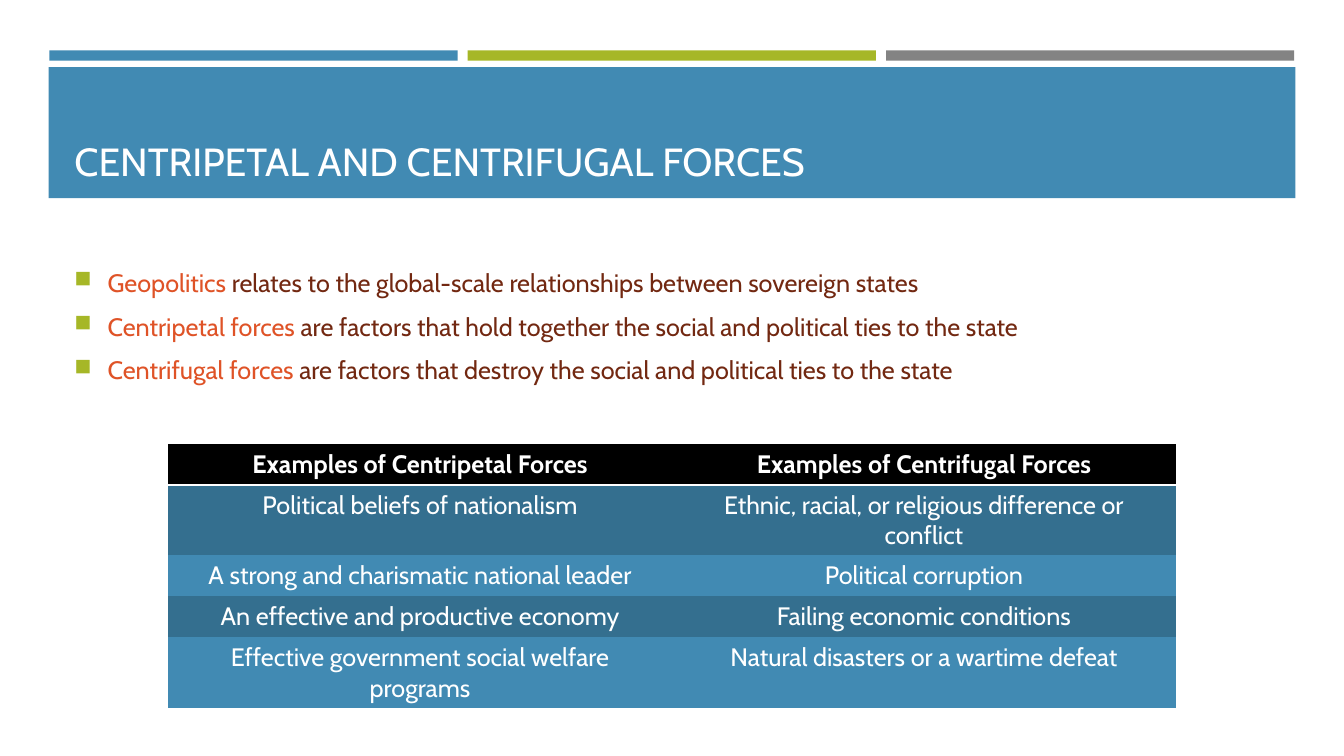
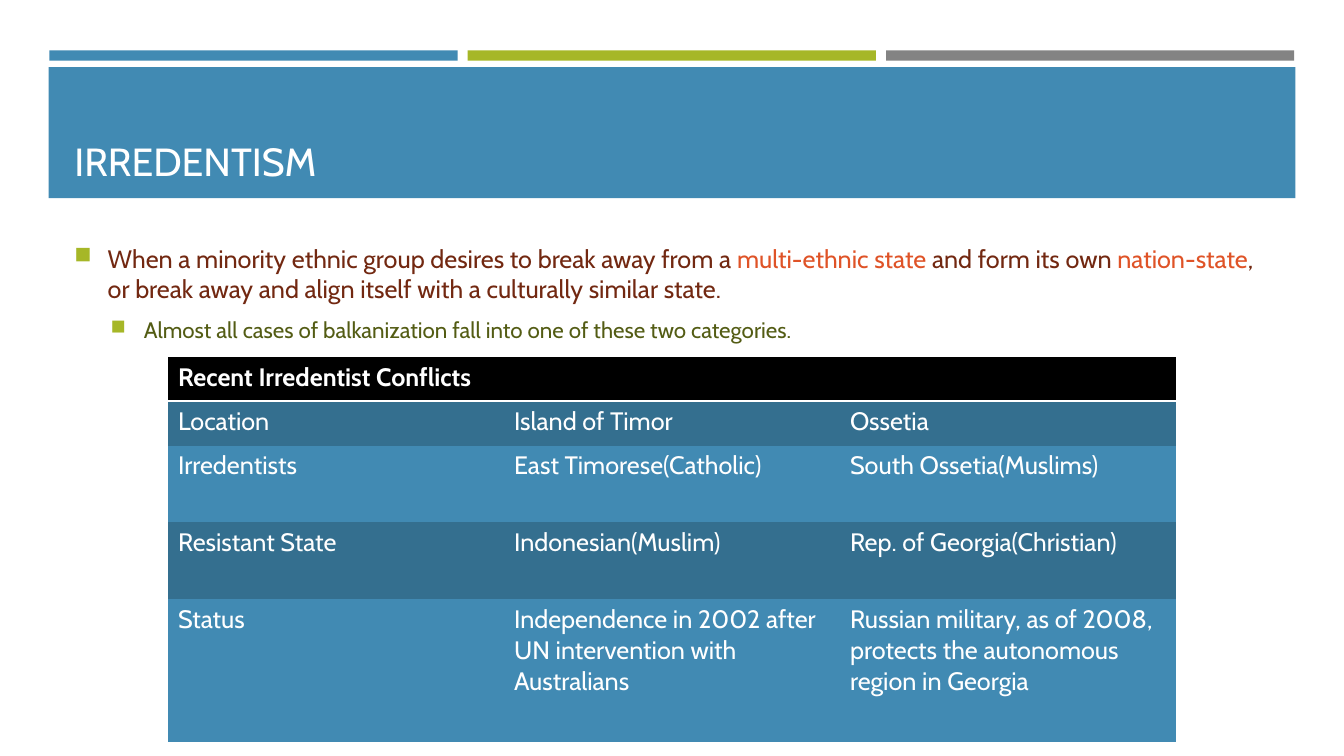
from lxml.etree import SubElement
from pptx import Presentation
from pptx.dml.color import RGBColor
from pptx.enum.shapes import MSO_SHAPE as SHAPE
from pptx.enum.text import MSO_ANCHOR as ANCHOR, PP_ALIGN as ALIGN
from pptx.oxml.ns import qn
from pptx.util import Inches, Pt

COLORS = {
    "blue": "418AB3", "deep_blue": "346F8F", "green": "A6B727", "gray": "838383",
    "black": "000000", "white": "FFFFFF", "orange": "DF5327", "brown": "722811",
    "olive": "535C14",
}
FONT = "Cabin"
COLS, ROWS = 80, 45
PLAIN_TABLE = "{2D5ABB26-0587-4C30-8999-92F81FD0307C}"
TITLE = {"size": Pt(28)}
CELL = {"size": Pt(18), "bold": False}
HEADER = {"size": Pt(18), "bold": True}
# Size in points, text start in inches, for each bullet level
LEVELS = [(18, 0.33), (16, 0.69)]
HANG = 0.33


def rgb(name):
    return RGBColor.from_string(COLORS[name])


class Deck:
    """Slide style and current slide; lengths are columns and rows of an 80 by 45 grid."""

    def __init__(self):
        self.prs = Presentation()
        self.prs.slide_width, self.prs.slide_height = Inches(13.333), Inches(7.5)
        self.slide = None

    def x(self, cols):
        return round(self.prs.slide_width * cols / COLS)

    def y(self, rows):
        return round(self.prs.slide_height * rows / ROWS)

    def box(self, left, top, width, height):
        return self.x(left), self.y(top), self.x(width), self.y(height)

    def new_slide(self, title):
        self.slide = self.prs.slides.add_slide(self.prs.slide_layouts[6])
        bar, gap = 24.3, 0.6
        for i, color in enumerate(("blue", "green", "gray")):
            self.band(2.94 + i * (bar + gap), 3, bar, 0.62, color)
        self.band(2.9, 4, 74.2, 7.8, "blue")
        tf = self.text_frame(3.84, 4.62, 72.36, 6.66, ANCHOR.BOTTOM)
        self.run(tf.paragraphs[0], title, "white", TITLE)

    def band(self, left, top, width, height, color):
        sp = self.slide.shapes.add_shape(SHAPE.RECTANGLE, *self.box(left, top, width, height))
        sp.shadow.inherit = False
        sp.fill.solid()
        sp.fill.fore_color.rgb = rgb(color)
        sp.line.fill.background()

    def text_frame(self, left, top, width, height, anchor):
        tf = self.slide.shapes.add_textbox(*self.box(left, top, width, height)).text_frame
        tf.word_wrap = True
        tf.vertical_anchor = anchor
        return tf

    def run(self, p, text, color, style):
        r = p.add_run()
        r.text = text
        for name, value in {"name": FONT, **style}.items():
            setattr(r.font, name, value)
        r.font.color.rgb = rgb(color)

    def bullets(self, height, items):
        """Each item is a level and a list of (text, color) runs."""
        tf = self.text_frame(3.84, 14.28, 72.36, height, ANCHOR.MIDDLE)
        for i, (level, runs) in enumerate(items):
            p = tf.add_paragraph() if i else tf.paragraphs[0]
            size, indent = LEVELS[level]
            layout = {"level": level, "space_before": Pt(size * 0.2), "space_after": Pt(6)}
            for name, value in layout.items():
                setattr(p, name, value)
            self.bullet_mark(p, indent)
            for text, color in runs:
                self.run(p, text, color, {"size": Pt(size)})

    def bullet_mark(self, p, indent):
        pPr = p._p.get_or_add_pPr()
        pPr.set("marL", str(Inches(indent)))
        pPr.set("indent", str(-Inches(HANG)))
        color = SubElement(pPr, qn("a:buClr"))
        SubElement(color, qn("a:srgbClr"), val=COLORS["green"])
        SubElement(pPr, qn("a:buSzPct"), val="92000")
        SubElement(pPr, qn("a:buChar"), char="■")

    def table(self, top, heights, rows, align=ALIGN.LEFT):
        """A header row narrower than the table is merged across it."""
        n_cols, width = len(rows[-1]), 60
        frame = self.slide.shapes.add_table(
            len(rows), n_cols, *self.box((COLS - width) / 2, top, width, sum(heights)))
        table = frame.table
        table._tbl.tblPr.find(qn("a:tableStyleId")).text = PLAIN_TABLE
        for col in table.columns:
            col.width = self.x(width / n_cols)
        for i, (texts, height) in enumerate(zip(rows, heights)):
            table.rows[i].height = self.y(height)
            fill = ("deep_blue" if i % 2 else "blue") if i else "black"
            for j in range(n_cols):
                cell = table.cell(i, j)
                if i == 0:
                    self.bottom_border(cell)
                cell.fill.solid()
                cell.fill.fore_color.rgb = rgb(fill)
                if j < len(texts):
                    p = cell.text_frame.paragraphs[0]
                    p.alignment = align
                    self.run(p, texts[j], "white", CELL if i else HEADER)
        if len(rows[0]) < n_cols:
            table.cell(0, 0).merge(table.cell(0, n_cols - 1))

    def bottom_border(self, cell):
        line = SubElement(cell._tc.get_or_add_tcPr(), qn("a:lnB"), w=str(Pt(2)))
        fill = SubElement(line, qn("a:solidFill"))
        SubElement(fill, qn("a:srgbClr"), val=COLORS["white"])


def main():
    deck = Deck()

    deck.new_slide("CENTRIPETAL AND CENTRIFUGAL FORCES")
    definitions = [
        ("Geopolitics", " relates to the global-scale relationships between sovereign states"),
        ("Centripetal forces ",
         "are factors that hold together the social and political ties to the state"),
        ("Centrifugal forces ",
         "are factors that destroy the social and political ties to the state"),
    ]
    deck.bullets(10.26, [(0, [(term, "orange"), (meaning, "brown")])
                         for term, meaning in definitions])
    deck.table(26.42, [2.44] * 5, [
        ("Examples of Centripetal Forces", "Examples of Centrifugal Forces"),
        ("Political beliefs of nationalism",
         "Ethnic, racial, or religious difference or conflict"),
        ("A strong and charismatic national leader", "Political corruption"),
        ("An effective and productive economy", "Failing economic conditions"),
        ("Effective government social welfare programs",
         "Natural disasters or a wartime defeat"),
    ], ALIGN.CENTER)

    deck.new_slide("IRREDENTISM")
    deck.bullets(6.36, [
        (0, [("When a minority ethnic group desires to break away from a ", "brown"),
             ("multi-ethnic state ", "orange"),
             ("and form its own ", "brown"),
             ("nation-state", "orange"),
             (", or break away and align itself with a culturally similar state.", "brown")]),
        (1, [("Almost all cases of balkanization fall into one of these two categories.",
              "olive")]),
    ])
    deck.table(21.24, [2.64, 2.64, 4.58, 4.58, 8.52], [
        ("Recent Irredentist Conflicts",),
        ("Location", "Island of Timor", "Ossetia"),
        ("Irredentists", "East Timorese(Catholic)", "South Ossetia(Muslims)"),
        ("Resistant State", "Indonesian(Muslim)", "Rep. of Georgia(Christian)"),
        ("Status", "Independence in 2002 after UN intervention with Australians",
         "Russian military, as of 2008, protects the autonomous region in Georgia"),
    ])

    deck.prs.save("out.pptx")


if __name__ == "__main__":
    main()
